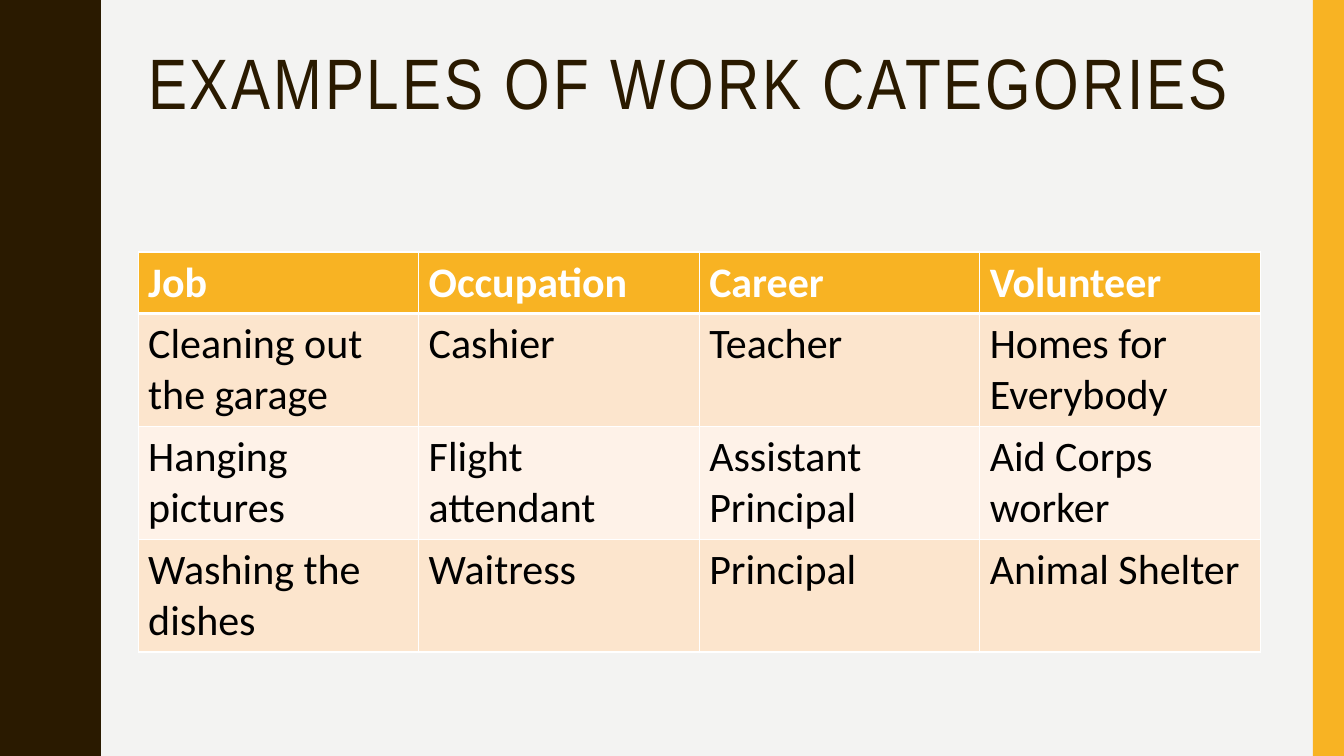
from lxml import etree
from pptx import Presentation
from pptx import util as u
from pptx.dml.color import RGBColor
from pptx.enum import shapes, text
from pptx.oxml import ns

HUES = {"paper": "F3F3F2", "dark": "2A1A00", "gold": "F8B323", "white": "FFFFFF",
        "black": "000000", "peach": "FCE5CD", "cream": "FEF2E8"}
WIDE, HIGH = 13.33, 7.5
LEFT, SPAN = 1.37, 11.13
WAVES = 5
# one half wave: share of the depth, share of the half length
CURVE = [(0, 0), (.02, .09), (.06, .18), (.11, .27), (.17, .33), (.26, .39),
         (.37, .45), (.47, .5), (.58, .56), (.68, .61), (.79, .67),
         (.89, .74), (.95, .82), (.99, .91), (1, 1)]
JOBS = [
    ["Job", "Occupation", "Career", "Volunteer"],
    ["Cleaning out the garage", "Cashier", "Teacher", "Homes for Everybody"],
    ["Hanging pictures", "Flight attendant", "Assistant Principal", "Aid Corps worker"],
    ["Washing the dishes", "Waitress", "Principal", "Animal Shelter"],
]
ROWS = [0.61, 1.12, 1.12, 1.12]


def tint(fill, hue):
    fill.solid()
    fill.fore_color.rgb = RGBColor.from_string(HUES[hue])


def paint(shape, hue):
    tint(shape.fill, hue)
    shape.line.fill.background()
    shape.shadow.inherit = False


def write(para, words, face, size, hue, bold=False):
    run = para.add_run()
    run.text = words
    run.font.name, run.font.size, run.font.bold = face, u.Pt(size), bold
    run.font.color.rgb = RGBColor.from_string(HUES[hue])
    return run


def edge(cell, side, width):
    """Draw one white border of a cell; side is L, R, T or B."""
    props = cell._tc.get_or_add_tcPr()
    line = etree.SubElement(props, ns.qn("a:ln" + side), w=str(u.Pt(width)))
    fill = etree.SubElement(line, ns.qn("a:solidFill"))
    etree.SubElement(fill, ns.qn("a:srgbClr"), val=HUES["white"])


def wave(slide, inner, outer, high):
    """Fill the left side up to an edge that swings from inner to outer."""
    half = high / WAVES / 2
    back = [(x, 2 - y) for x, y in CURVE[-2::-1]]
    dots = [(inner + (outer - inner) * x, half * (2 * i + y))
            for i in range(WAVES) for x, y in CURVE + back]
    path = slide.shapes.build_freeform(0, 0, scale=u.Inches(1))
    path.add_line_segments(dots + [(0, high)], close=True)
    paint(path.convert_to_shape(), "dark")


def band(slide, left, top, width, high):
    box = map(u.Inches, (left, top, width, high))
    paint(slide.shapes.add_shape(shapes.MSO_SHAPE.RECTANGLE, *box), "gold")


def head(slide, left, top, width, high):
    title = slide.shapes.title
    title.left, title.top, title.width, title.height = map(
        u.Inches, (left, top, width, high))
    frame = title.text_frame
    frame.word_wrap = True
    frame.auto_size = text.MSO_AUTO_SIZE.NONE
    frame.vertical_anchor = text.MSO_ANCHOR.TOP
    para = frame.paragraphs[0]
    para.alignment = text.PP_ALIGN.LEFT
    para.line_spacing = 0.9
    run = write(para, "EXAMPLES OF WORK CATEGORIES", "Arial Narrow", 51, "dark")
    run.font._element.set("spc", "200")


def grid(slide, left, top, width):
    box = map(u.Inches, (left, top, width, sum(ROWS)))
    table = slide.shapes.add_table(len(JOBS), len(JOBS[0]), *box).table
    for r, words in enumerate(JOBS):
        table.rows[r].height = u.Inches(ROWS[r])
        first = r == 0
        hue = "gold" if first else ("peach" if r % 2 else "cream")
        for c, word in enumerate(words):
            cell = table.cell(r, c)
            for side in "LRTB":
                thick = (first and side == "B") or (r == 1 and side == "T")
                edge(cell, side, 3 if thick else 1)
            tint(cell.fill, hue)
            write(cell.text_frame.paragraphs[0], word, "Calibri", 30,
                  "white" if first else "black", first)


def main():
    deck = Presentation()
    deck.slide_width, deck.slide_height = u.Inches(WIDE), u.Inches(HIGH)
    slide = deck.slides.add_slide(deck.slide_layouts[5])
    tint(slide.background.fill, "paper")
    wave(slide, 0.78, 0.97, HIGH)
    band(slide, WIDE - 0.31, 0, 0.31, HIGH)
    head(slide, LEFT, 0.42, SPAN, 1.63)
    grid(slide, LEFT, HIGH / 3, SPAN)
    deck.save("out.pptx")


if __name__ == "__main__":
    main()
